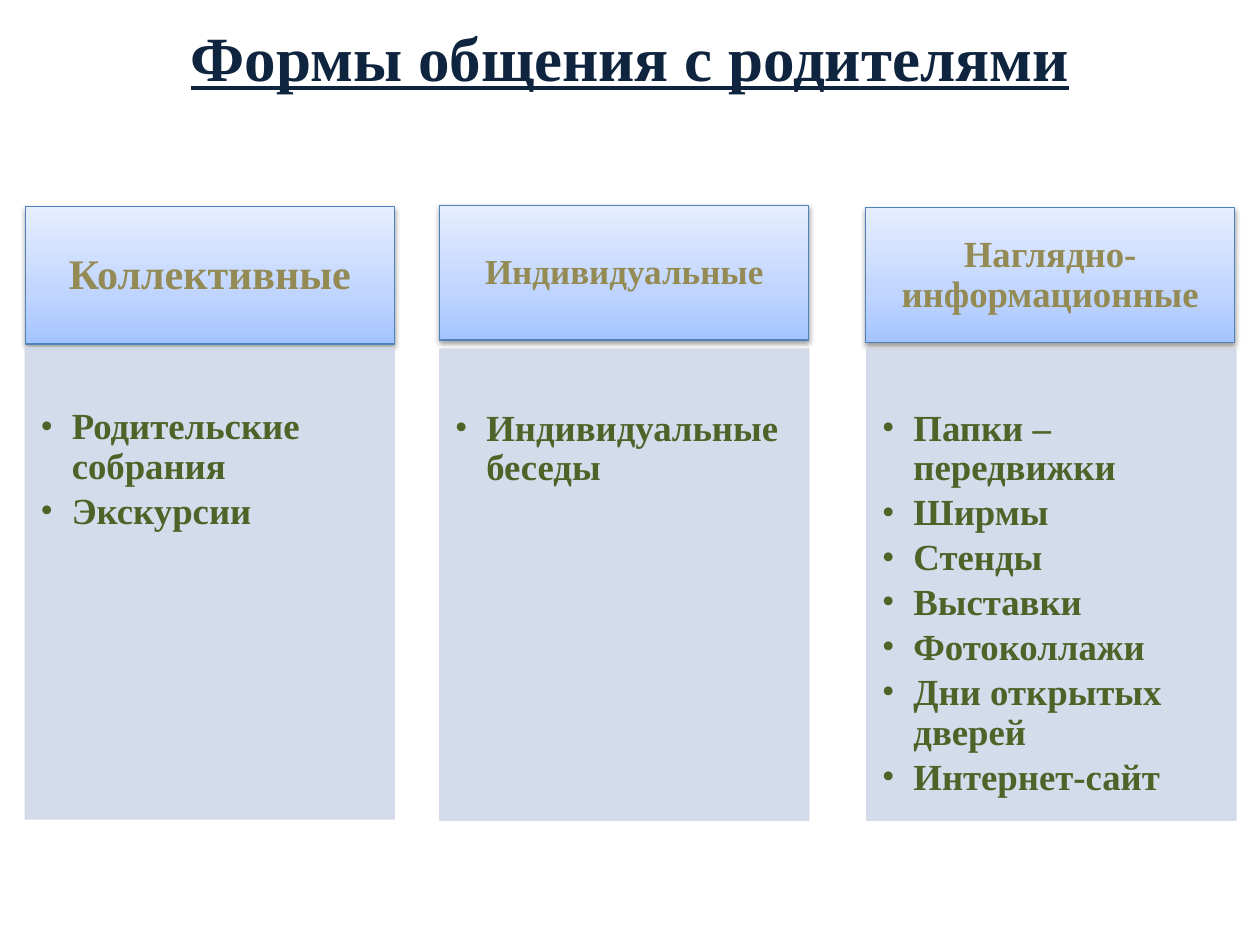
from dataclasses import dataclass

import pptx
import pptx.dml.color
import pptx.enum.shapes
import pptx.enum.text
import pptx.oxml
import pptx.oxml.ns
import pptx.util
from copy import deepcopy
from lxml import etree

Inches = pptx.util.Inches
Pt = pptx.util.Pt
RGBColor = pptx.dml.color.RGBColor
PP_ALIGN = pptx.enum.text.PP_ALIGN
MSO_ANCHOR = pptx.enum.text.MSO_ANCHOR
qn = pptx.oxml.ns.qn

FONT = "Times New Roman"
NAVY = RGBColor(0x0F, 0x24, 0x3E)
KHAKI = RGBColor(0x94, 0x8A, 0x54)
OLIVE = RGBColor(0x4F, 0x62, 0x28)
BORDER = RGBColor(0x4F, 0x81, 0xBD)
PANEL = RGBColor(0xD0, 0xD8, 0xE8)
HEADER_STOPS = (
    (0, RGBColor(0xA4, 0xC4, 0xFF)),
    (0.35, RGBColor(0xBF, 0xD4, 0xFF)),
    (1, RGBColor(0xE6, 0xEE, 0xFF)),
)
COLUMN_WIDTH = 2.93
PANEL_HEIGHT = 3.74
ITEM_SIZE = 21


@dataclass(frozen=True)
class Column:
    heading: str
    heading_size: int
    left: float
    top: float
    heading_height: float
    panel_left: float
    panel_top: float
    items: tuple[str, ...]


COLUMNS = (
    Column("Коллективные", 24, 0.2, 1.64, 1.09, 0.2, 2.76,
           ("Родительские собрания", "Экскурсии")),
    Column("Индивидуальные", 20, 3.49, 1.63, 1.07, 3.49, 2.77,
           ("Индивидуальные беседы",)),
    Column("Наглядно-информационные", 21, 6.87, 1.65, 1.07, 6.88, 2.77,
           ("Папки –передвижки", "Ширмы", "Стенды", "Выставки",
            "Фотоколлажи", "Дни открытых дверей", "Интернет-сайт")),
)


def style_runs(paragraph, size: int, color: RGBColor, underline: bool = False) -> None:
    for run in paragraph.runs:
        run.font.name = FONT
        run.font.size = Pt(size)
        run.font.bold = True
        run.font.underline = underline
        run.font.color.rgb = color


def set_frame(frame, anchor, left: float, top: float, right: float, bottom: float) -> None:
    frame.word_wrap = True
    frame.vertical_anchor = anchor
    frame.margin_left, frame.margin_top = Inches(left), Inches(top)
    frame.margin_right, frame.margin_bottom = Inches(right), Inches(bottom)


def add_rectangle(slide, left: float, top: float, height: float, border: RGBColor):
    rectangle = slide.shapes.add_shape(
        pptx.enum.shapes.MSO_SHAPE.RECTANGLE,
        Inches(left), Inches(top), Inches(COLUMN_WIDTH), Inches(height))
    rectangle.shadow.inherit = False
    rectangle.line.color.rgb = border
    rectangle.line.width = Pt(0.75)
    return rectangle


def add_alpha(color_element, percent: int) -> None:
    etree.SubElement(color_element, qn("a:alpha")).set("val", str(percent * 1000))


def add_title(slide, text: str) -> None:
    title = slide.shapes.add_textbox(Inches(0.5), Inches(0.13), Inches(9), Inches(0.63))
    set_frame(title.text_frame, MSO_ANCHOR.MIDDLE, 0.1, 0.05, 0.1, 0.05)
    title.text_frame.text = text
    line = title.text_frame.paragraphs[0]
    line.alignment = PP_ALIGN.CENTER
    style_runs(line, 36, NAVY, underline=True)


def add_heading(slide, column: Column) -> None:
    heading = add_rectangle(slide, column.left, column.top, column.heading_height, BORDER)
    properties = heading._element.spPr

    heading.fill.gradient()
    heading.fill.gradient_angle = 90
    stop_list = properties.find(qn("a:gradFill")).find(qn("a:gsLst"))
    stop_list.append(deepcopy(stop_list[-1]))
    for stop, (position, color) in zip(heading.fill.gradient_stops, HEADER_STOPS):
        stop.position = position
        stop.color.rgb = color

    shadow = etree.SubElement(properties.find(qn("a:effectLst")), qn("a:outerShdw"))
    shadow.set("blurRad", str(Pt(3.1)))
    shadow.set("dist", str(Pt(1.6)))
    shadow.set("dir", "5400000")
    shadow.set("rotWithShape", "0")
    shadow_color = etree.SubElement(shadow, qn("a:srgbClr"))
    shadow_color.set("val", "000000")
    add_alpha(shadow_color, 38)

    set_frame(heading.text_frame, MSO_ANCHOR.MIDDLE, 0.16, 0.09, 0.16, 0.09)
    heading.text_frame.text = column.heading
    label = heading.text_frame.paragraphs[0]
    label.alignment = PP_ALIGN.CENTER
    label.line_spacing = 0.9
    style_runs(label, column.heading_size, KHAKI)


def add_panel(slide, column: Column) -> None:
    panel = add_rectangle(slide, column.panel_left, column.panel_top, PANEL_HEIGHT, PANEL)
    panel.fill.solid()
    panel.fill.fore_color.rgb = PANEL
    for color_element in panel._element.spPr.iter(qn("a:srgbClr")):
        add_alpha(color_element, 90)

    set_frame(panel.text_frame, MSO_ANCHOR.TOP, 0.12, 0.48, 0.16, 0.18)
    panel.text_frame.text = "\n".join(column.items)
    for item in panel.text_frame.paragraphs:
        item.alignment = PP_ALIGN.LEFT
        item.line_spacing = 0.9
        item.space_after = Pt(3)
        indents = item._p.get_or_add_pPr()
        indents.set("marL", str(Inches(0.25)))
        indents.set("indent", str(Inches(-0.25)))
        etree.SubElement(indents, qn("a:buFont")).set("typeface", FONT)
        etree.SubElement(indents, qn("a:buChar")).set("char", "•")
        style_runs(item, ITEM_SIZE, OLIVE)


def main() -> None:
    presentation = pptx.Presentation()
    presentation.slide_width = Inches(10)
    presentation.slide_height = Inches(7.5)
    slide = presentation.slides.add_slide(presentation.slide_layouts[6])
    add_title(slide, "Формы общения с родителями")
    for column in COLUMNS:
        add_heading(slide, column)
        add_panel(slide, column)
    presentation.save("out.pptx")


if __name__ == "__main__":
    main()
